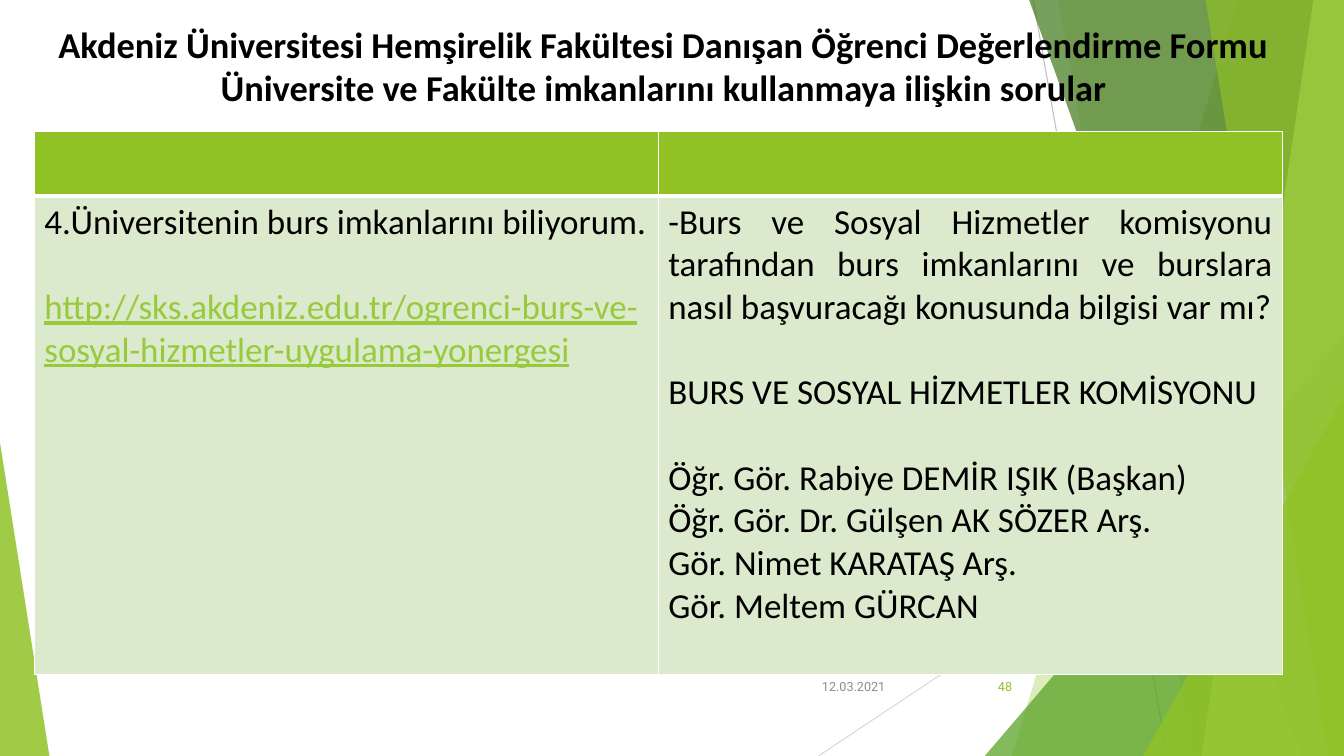
from typing import NamedTuple

from lxml.etree import SubElement
from pptx import Presentation
from pptx.dml.color import RGBColor
from pptx.enum.shapes import MSO_CONNECTOR, MSO_SHAPE
from pptx.enum.text import MSO_ANCHOR, MSO_AUTO_SIZE, PP_ALIGN
from pptx.oxml.ns import qn
from pptx.util import Pt

WIDTH, HEIGHT = 960, 540
BODY_SIZE = 25
BLANK_LINE = 30.5
COLORS = {
    "black": "000000", "white": "FFFFFF", "gray": "8C8C8C",
    "line": "BFBFBF", "pale line": "D9D9D9",
    "green": "90C226", "mid green": "54A021", "dark green": "3F7819",
    "light green": "C0E474", "link": "99CA3C", "cell": "DBE9CD",
}


class Ray(NamedTuple):
    start: tuple[float, float]
    end: tuple[float, float]
    color: str


class Band(NamedTuple):
    """A panel reaching the right slide edge, with a slanted left side."""
    top_x: float
    bottom_x: float
    color: str
    opacity: int


class Triangle(NamedTuple):
    left: float
    top: float
    width: float
    apex: float
    color: str
    opacity: int


class Entry(NamedTuple):
    text: str
    gap: float = 0
    color: str = "black"
    underline: bool = False


RAYS = [
    Ray((738, 0), (833.76, HEIGHT), "line"),
    Ray((WIDTH, 290.16), (584.64, HEIGHT), "pale line"),
]
PANELS = [
    Band(884.16, 722.88, "green", 30),
    Band(756, 851.76, "green", 20),
    Triangle(703.44, 239.76, 256.56, 1, "mid green", 72),
    Band(735.12, 929.52, "dark green", 70),
    Band(938.16, 858.24, "light green", 70),
    Band(861.12, 948.96, "green", 65),
    Triangle(816.48, 282.96, 143.52, 1, "green", 80),
    Triangle(0, 316.08, 35.28, 0, "green", 85),
]
TITLE = ("Akdeniz Üniversitesi Hemşirelik Fakültesi Danışan Öğrenci Değerlendirme Formu "
         "Üniversite ve Fakülte imkanlarını kullanmaya ilişkin sorular")
QUESTION = [
    Entry("4.Üniversitenin burs imkanlarını biliyorum."),
    Entry("http://sks.akdeniz.edu.tr/ogrenci-burs-ve-sosyal-hizmetler-uygulama-yonergesi",
          BLANK_LINE, "link", True),
]
COMMISSION = [
    Entry("-Burs ve Sosyal Hizmetler komisyonu tarafından burs imkanlarını ve burslara "
          "nasıl başvuracağı konusunda bilgisi var mı?"),
    Entry("BURS VE SOSYAL HİZMETLER KOMİSYONU", BLANK_LINE),
    Entry("Öğr. Gör. Rabiye DEMİR IŞIK (Başkan)", BLANK_LINE),
    Entry("Öğr. Gör. Dr. Gülşen AK SÖZER Arş."),
    Entry("Gör. Nimet KARATAŞ Arş."),
    Entry("Gör. Meltem GÜRCAN"),
]


def rgb(color: str) -> RGBColor:
    return RGBColor.from_string(COLORS[color])


def write(paragraph, text: str, *, size: float, font: str = "Calibri", color: str = "black",
          align=PP_ALIGN.LEFT, bold: bool = False, underline: bool = False,
          gap: float = 0) -> None:
    paragraph.alignment = align
    paragraph.space_before = Pt(gap)
    run = paragraph.add_run()
    run.text = text
    run.font.name, run.font.size = font, Pt(size)
    run.font.bold, run.font.underline = bold, underline
    run.font.color.rgb = rgb(color)


def draw_ray(slide, ray: Ray) -> None:
    connector = slide.shapes.add_connector(
        MSO_CONNECTOR.STRAIGHT, *(Pt(value) for value in ray.start + ray.end))
    connector.line.color.rgb = rgb(ray.color)
    connector.line.width = Pt(0.75)
    SubElement(connector._element.spPr, qn("a:effectLst"))


def draw_panel(slide, panel: Band | Triangle) -> None:
    if isinstance(panel, Band):
        builder = slide.shapes.build_freeform(Pt(panel.top_x), 0)
        builder.add_line_segments([(Pt(WIDTH), 0), (Pt(WIDTH), Pt(HEIGHT)),
                                   (Pt(panel.bottom_x), Pt(HEIGHT))])
        shape = builder.convert_to_shape()
    else:
        shape = slide.shapes.add_shape(
            MSO_SHAPE.ISOSCELES_TRIANGLE, Pt(panel.left), Pt(panel.top),
            Pt(panel.width), Pt(HEIGHT - panel.top))
        shape.adjustments[0] = panel.apex
    shape.shadow.inherit = False
    shape.line.fill.background()
    shape.fill.solid()
    shape.fill.fore_color.rgb = rgb(panel.color)
    color = shape._element.spPr.find(qn("a:solidFill"))[0]
    SubElement(color, qn("a:alpha"), val=str(panel.opacity * 1000))


def draw_title(slide) -> None:
    title = slide.shapes.title
    slide.shapes._spTree.append(title._element)  # in front of the panels
    title.left, title.top, title.width, title.height = Pt(33), Pt(12), Pt(883), Pt(104)
    frame = title.text_frame
    frame.auto_size = MSO_AUTO_SIZE.NONE
    frame.word_wrap = True
    frame.vertical_anchor = MSO_ANCHOR.TOP
    write(frame.paragraphs[0], TITLE, size=26, bold=True, align=PP_ALIGN.CENTER)


def style_cell(cell, fill: str, bottom_width: float) -> None:
    properties = cell._tc.get_or_add_tcPr()
    for side, width in {"L": 1, "R": 1, "T": 1, "B": bottom_width}.items():
        border = SubElement(properties, qn(f"a:ln{side}"), w=str(Pt(width)))
        SubElement(SubElement(border, qn("a:solidFill")), qn("a:srgbClr"), val=COLORS["white"])
    cell.fill.solid()
    cell.fill.fore_color.rgb = rgb(fill)


def draw_table(slide) -> None:
    table = slide.shapes.add_table(2, 2, Pt(24.5), Pt(94), Pt(891.4), Pt(388)).table
    table.rows[0].height, table.rows[1].height = Pt(46), Pt(342)
    for column, entries in enumerate([QUESTION, COMMISSION]):
        style_cell(table.cell(0, column), "green", 3)
        cell = table.cell(1, column)
        style_cell(cell, "cell", 1)
        frame = cell.text_frame
        for index, entry in enumerate(entries):
            paragraph = frame.add_paragraph() if index else frame.paragraphs[0]
            write(paragraph, entry.text, size=BODY_SIZE, color=entry.color,
                  underline=entry.underline, gap=entry.gap, align=PP_ALIGN.JUSTIFY)


def draw_footer(slide, text: str, left: float, width: float, color: str) -> None:
    frame = slide.shapes.add_textbox(Pt(left), Pt(476), Pt(width), Pt(28.8)).text_frame
    frame.word_wrap = True
    frame.vertical_anchor = MSO_ANCHOR.MIDDLE
    write(frame.paragraphs[0], text, size=9, font="Roboto", color=color, align=PP_ALIGN.RIGHT)


def main() -> None:
    presentation = Presentation()
    presentation.slide_width, presentation.slide_height = Pt(WIDTH), Pt(HEIGHT)
    slide = presentation.slides.add_slide(presentation.slide_layouts[5])
    for ray in RAYS:
        draw_ray(slide, ray)
    for panel in PANELS:
        draw_panel(slide, panel)
    draw_title(slide)
    draw_table(slide)
    draw_footer(slide, "12.03.2021", 567.4, 72, "gray")
    draw_footer(slide, "48", 676, 54, "green")
    presentation.save("out.pptx")


if __name__ == "__main__":
    main()
